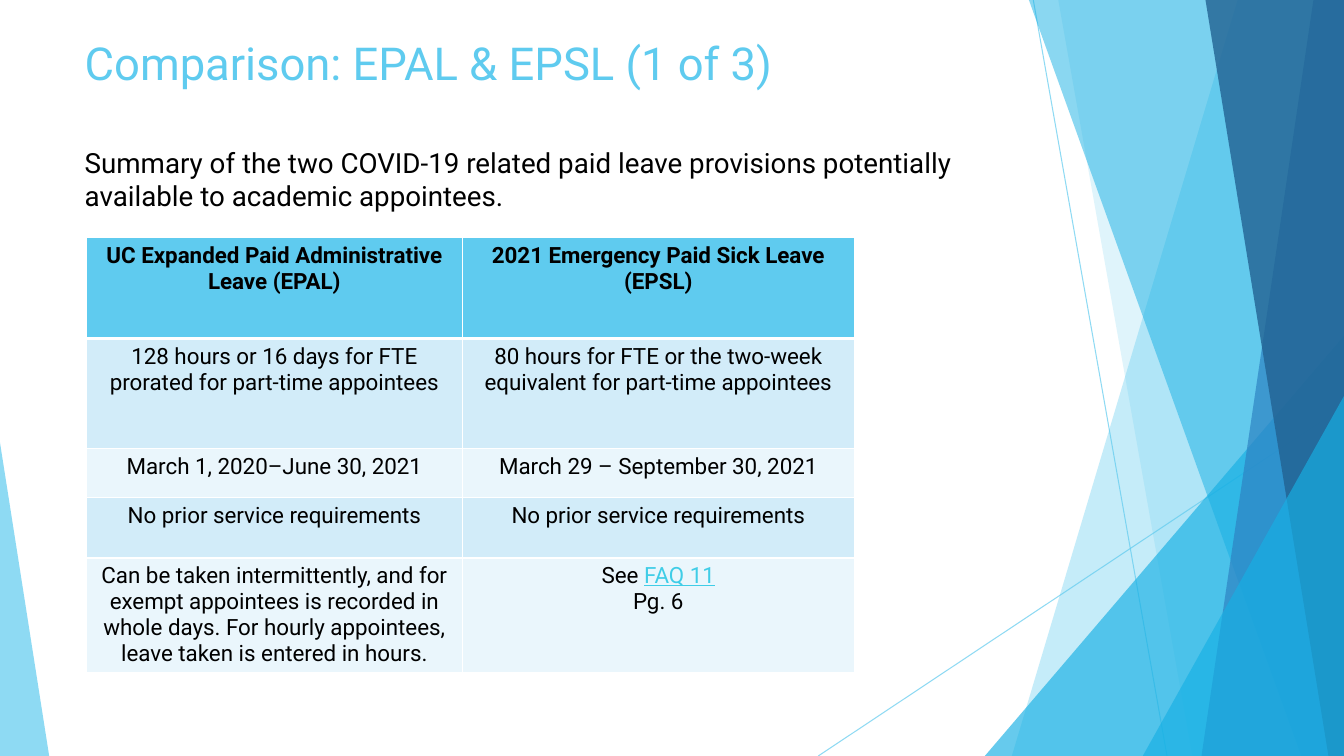
from lxml import etree
from pptx import Presentation
from pptx.dml.color import RGBColor
from pptx.enum.shapes import MSO_CONNECTOR, MSO_SHAPE
from pptx.enum.text import MSO_ANCHOR as ANCHOR, MSO_AUTO_SIZE as AUTO, PP_ALIGN as ALIGN
from pptx.oxml.ns import qn
from pptx.util import Cm, Pt

FONT = "Roboto"
WIDTH, HEIGHT = 33.87, 19.05
BLACK = RGBColor(0x00, 0x00, 0x00)
SKY = RGBColor(0x5F, 0xCB, 0xEF)
CYAN = RGBColor(0x17, 0xB0, 0xE4)
BLUE = RGBColor(0x2E, 0x83, 0xC3)
NAVY = RGBColor(0x22, 0x62, 0x92)
LINK = RGBColor(0x3F, 0xCD, 0xE7)
BAND_DARK = RGBColor(0xD2, 0xEC, 0xF9)
BAND_LIGHT = RGBColor(0xEA, 0xF6, 0xFC)

COLUMN_WIDTHS = [9.47, 9.88]
ROW_HEIGHTS = [2.54, 2.77, 1.24, 1.52, 2.87]
LEAVE_ROWS = [
    ["UC Expanded Paid Administrative Leave (EPAL)", "2021 Emergency Paid Sick Leave (EPSL)"],
    ["128 hours or 16 days for FTE prorated for part-time appointees",
     "80 hours for FTE or the two-week equivalent for part-time appointees"],
    ["March 1, 2020–June 30, 2021", "March 29 – September 30, 2021"],
    ["No prior service requirements", "No prior service requirements"],
    ["Can be taken intermittently, and for exempt appointees is recorded in whole days. "
     "For hourly appointees, leave taken is entered in hours.", "See "],
]


def add_text(p, text, size=16, color=BLACK, bold=False, underline=False, align=ALIGN.CENTER):
    """Add a formatted run to a paragraph."""
    p.alignment = align
    r = p.add_run()
    r.text = text
    r.font.name, r.font.size = FONT, Pt(size)
    r.font.bold, r.font.underline = bold, underline
    r.font.color.rgb = color


def set_alpha(sp, percent):
    """Set the opacity of the colour used by a shape or line."""
    clr = sp._element.spPr.find(".//" + qn("a:srgbClr"))
    etree.SubElement(clr, qn("a:alpha"), val=str(percent * 1000))


def paint(sp, color, alpha):
    """Give a shape a translucent fill without outline or shadow."""
    sp.shadow.inherit = False
    sp.fill.solid()
    sp.fill.fore_color.rgb = color
    sp.line.fill.background()
    set_alpha(sp, alpha)


def add_ray(s, x1, y1, x2, y2):
    """Draw a thin translucent line."""
    line = s.shapes.add_connector(MSO_CONNECTOR.STRAIGHT, Cm(x1), Cm(y1), Cm(x2), Cm(y2))
    line.line.color.rgb = SKY
    line.line.width = Pt(0.75)
    set_alpha(line, 70)
    etree.SubElement(line._element.spPr, qn("a:effectLst"))


def add_panel(s, top_x, bottom_x, color, alpha):
    """Fill the area between a slanted edge and the right slide edge."""
    builder = s.shapes.build_freeform(Cm(top_x), 0, scale=1.0)
    corners = [(WIDTH, 0), (WIDTH, HEIGHT), (bottom_x, HEIGHT)]
    builder.add_line_segments([(Cm(x), Cm(y)) for x, y in corners], close=True)
    paint(builder.convert_to_shape(), color, alpha)


def add_triangle(s, left, top, width, apex, color, alpha):
    """Draw a triangle that stands on the bottom slide edge."""
    sp = s.shapes.add_shape(MSO_SHAPE.ISOSCELES_TRIANGLE, Cm(left), Cm(top),
                            Cm(width), Cm(HEIGHT - top))
    sp.adjustments[0] = apex
    paint(sp, color, alpha)


def add_facets(s):
    """Draw the decorative facets from back to front."""
    add_ray(s, 26.04, 0, 29.41, HEIGHT)
    add_ray(s, WIDTH, 10.24, 20.62, HEIGHT)
    add_panel(s, 31.19, 25.5, SKY, 36)
    add_panel(s, 26.67, 30.05, SKY, 20)
    add_triangle(s, 24.82, 8.46, 9.05, 1, CYAN, 66)
    add_panel(s, 25.93, 32.79, CYAN, 50)
    add_panel(s, 33.1, 30.28, BLUE, 70)
    add_panel(s, 30.38, 33.48, NAVY, 80)
    add_triangle(s, 28.8, 9.98, 5.07, 1, CYAN, 66)
    add_triangle(s, 0, 11.15, 1.24, 0, SKY, 70)


def add_heading(s):
    """Fill the title placeholder with the heading and its summary."""
    title = s.shapes.title
    title.left, title.top, title.width, title.height = Cm(1.88), Cm(0.76), Cm(23.88), Cm(1.73)
    title.element.getparent().append(title.element)
    tf = title.text_frame
    tf.word_wrap, tf.auto_size, tf.vertical_anchor = True, AUTO.NONE, ANCHOR.TOP
    add_text(tf.paragraphs[0], "Comparison: EPAL & EPSL (1 of 3)", size=32.4, color=SKY,
             align=ALIGN.LEFT)
    p = tf.add_paragraph()
    p.space_before = Pt(40)
    add_text(p, "Summary of the two COVID-19 related paid leave provisions potentially "
             "available to academic appointees.", size=19.8, align=ALIGN.LEFT)


def set_borders(cell, **widths):
    """Give a cell white borders, with widths in points by side."""
    tc_pr = cell._tc.get_or_add_tcPr()
    for side in "LRTB":
        ln = etree.SubElement(tc_pr, qn("a:ln" + side), w=str(Pt(widths.get(side, 1))))
        fill = etree.SubElement(ln, qn("a:solidFill"))
        etree.SubElement(fill, qn("a:srgbClr"), val="FFFFFF")


def add_leave_table(s):
    """Add the table that compares both leave provisions."""
    frame = s.shapes.add_table(len(ROW_HEIGHTS), len(COLUMN_WIDTHS), Cm(2.18), Cm(5.99),
                               Cm(sum(COLUMN_WIDTHS)), Cm(sum(ROW_HEIGHTS)))
    table = frame.table
    for column, width in zip(table.columns, COLUMN_WIDTHS):
        column.width = Cm(width)
    for i, (height, texts) in enumerate(zip(ROW_HEIGHTS, LEAVE_ROWS)):
        table.rows[i].height = Cm(height)
        band = SKY if i == 0 else BAND_DARK if i % 2 else BAND_LIGHT
        for j, text in enumerate(texts):
            cell = table.cell(i, j)
            set_borders(cell, B=3 if i == 0 else 1, T=3 if i == 1 else 1)
            cell.fill.solid()
            cell.fill.fore_color.rgb = band
            add_text(cell.text_frame.paragraphs[0], text, bold=i == 0)
    tf = table.cell(len(ROW_HEIGHTS) - 1, 1).text_frame
    add_text(tf.paragraphs[0], "FAQ 11", color=LINK, underline=True)
    add_text(tf.add_paragraph(), "Pg. 6")


def main():
    """Build and save the slide."""
    prs = Presentation()
    prs.slide_width, prs.slide_height = Cm(WIDTH), Cm(HEIGHT)
    s = prs.slides.add_slide(prs.slide_layouts[5])
    add_facets(s)
    add_heading(s)
    add_leave_table(s)
    prs.save("out.pptx")


if __name__ == "__main__":
    main()
